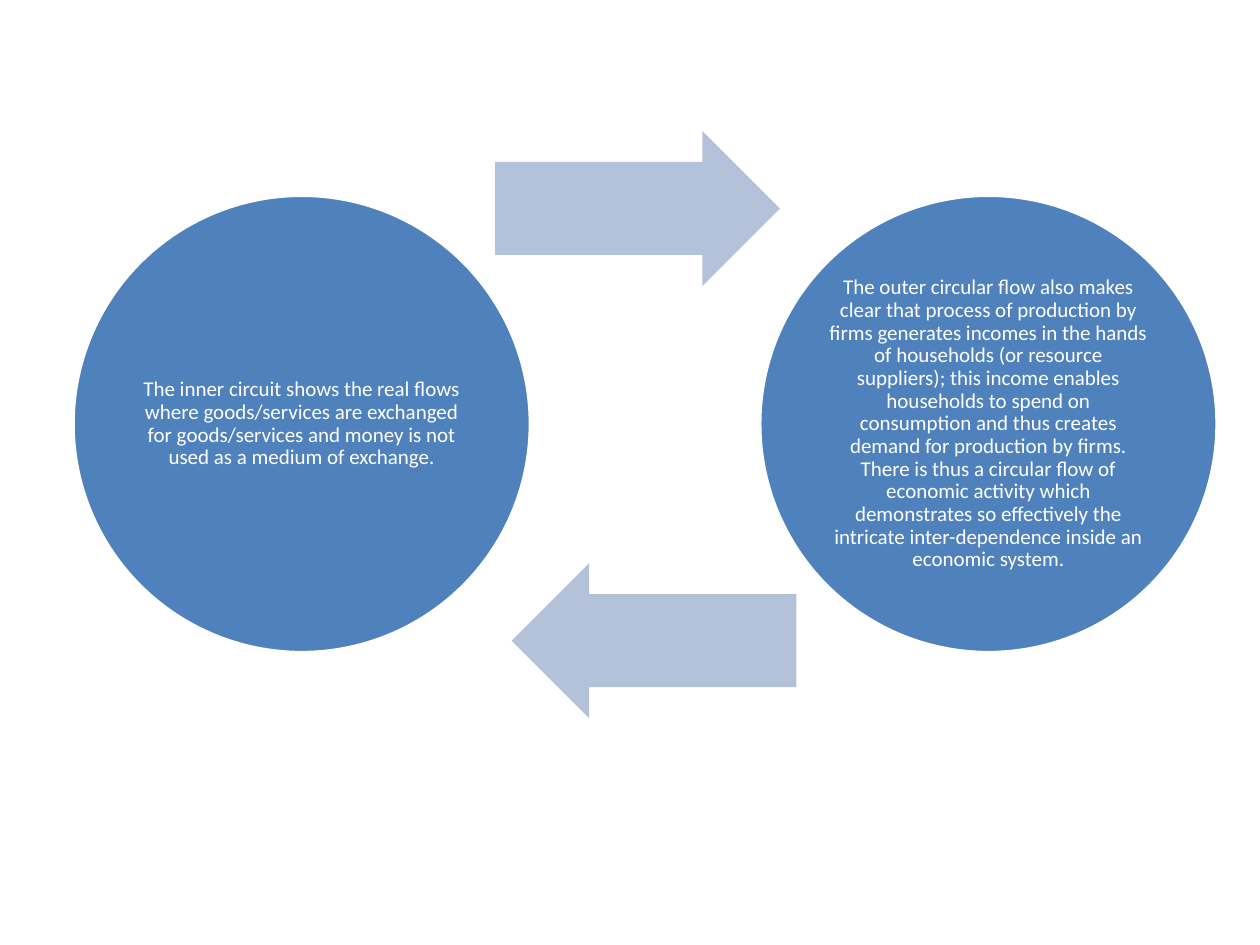
from pptx import Presentation, util as u
from pptx.dml.color import RGBColor
from pptx.enum import shapes, text

COLORS = {"circle": "4F81BD", "arrow": "B3C1DB", "white": "FFFFFF"}
INNER = ("The inner circuit shows the real flows where goods/services are exchanged "
         "for goods/services and money is not used as a medium of exchange.")
OUTER = ("The outer circular flow also makes clear that process of production by firms "
         "generates incomes in the hands of households (or resource suppliers); this income "
         "enables households to spend on consumption and thus creates demand for production "
         "by firms. There is thus a circular flow of economic activity which demonstrates so "
         "effectively the intricate inter-dependence inside an economic system.")
DIAMETER = 3.63

prs = Presentation()
prs.slide_width, prs.slide_height = u.Inches(10), u.Inches(7.5)
s = prs.slides.add_slide(prs.slide_layouts[6])


def add_shape(kind, x, y, w, h, color):
    sp = s.shapes.add_shape(kind, u.Inches(x), u.Inches(y), u.Inches(w), u.Inches(h))
    sp.shadow.inherit = False
    sp.fill.solid()
    sp.fill.fore_color.rgb = RGBColor.from_string(COLORS[color])
    return sp


flows = [(0.58, INNER, 3.93, 1.04, 0), (6.03, OUTER, 4.06, 4.47, 180)]
for circle_x, wording, arrow_x, arrow_y, angle in flows:
    sp = add_shape(shapes.MSO_SHAPE.OVAL, circle_x, 1.55, DIAMETER, DIAMETER, "circle")
    sp.line.color.rgb = RGBColor.from_string(COLORS["white"])
    sp.line.width = u.Pt(2)
    tf = sp.text_frame
    tf.word_wrap = True
    tf.vertical_anchor = text.MSO_ANCHOR.MIDDLE
    tf.margin_left = tf.margin_right = tf.margin_top = tf.margin_bottom = u.Inches(0.02)
    tf.text = wording
    p = tf.paragraphs[0]
    p.alignment = text.PP_ALIGN.CENTER
    p.line_spacing = 0.9
    r = p.runs[0]
    r.font.name = "Calibri"
    r.font.size = u.Pt(12)
    r.font.color.rgb = RGBColor.from_string(COLORS["white"])

    sp = add_shape(shapes.MSO_SHAPE.RIGHT_ARROW, arrow_x, arrow_y, 2.26, 1.23, "arrow")
    sp.line.fill.background()
    sp.adjustments[0] = 0.6
    sp.adjustments[1] = 0.5
    sp.rotation = angle

prs.save("out.pptx")
